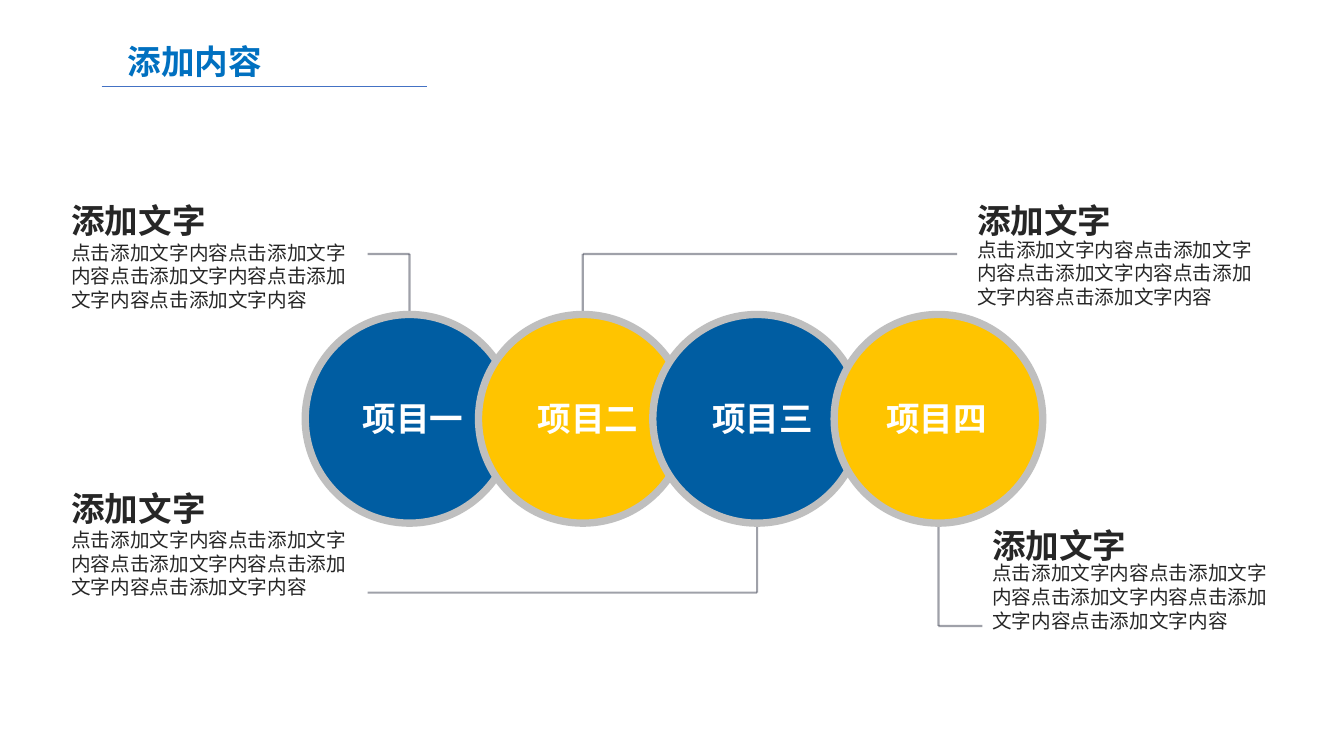
from dataclasses import dataclass

from lxml import etree
from pptx import Presentation
from pptx import util as u
from pptx.dml.color import RGBColor
from pptx.enum import shapes, text
from pptx.oxml.ns import qn


@dataclass(frozen=True)
class Theme:
    """Colours, type sizes and font of the slide."""
    font: str = "Noto Sans CJK SC"
    blue: str = "005DA2"
    gold: str = "FFC400"
    ring: str = "BFBFBF"
    ink: str = "262626"
    white: str = "FFFFFF"
    title: str = "0070C0"
    rule: str = "4472C4"
    link: str = "414455"
    head: int = 24
    body: int = 14


THEME = Theme()
SIZE = 2.07
TOP = 3.12


def rgb(code):
    """Turn a hex code into a colour."""
    return RGBColor.from_string(code)


def write(shape, words, size, color, bold=False, lead=None, align=text.PP_ALIGN.LEFT):
    """Put one styled paragraph into a shape."""
    frame = shape.text_frame
    frame.word_wrap = True
    frame.vertical_anchor = text.MSO_ANCHOR.TOP
    para = frame.paragraphs[0]
    para.text = words
    para.alignment = align
    if lead:
        para.line_spacing = lead
    font = para.font
    font.size, font.bold = u.Pt(size), bold
    font.color.rgb = rgb(color)
    font.name = THEME.font
    props = para._p.pPr.find(qn("a:defRPr"))
    etree.SubElement(props, qn("a:ea"), typeface=THEME.font)


def add_text(slide, box, words, size, color, **style):
    """Add a text box."""
    shape = slide.shapes.add_textbox(*map(u.Inches, box))
    write(shape, words, size, color, **style)
    return shape


def add_note(slide, left, top, drop):
    """Add a heading with its body text below."""
    add_text(slide, (left, top, 3.05, 0.43), "添加文字", THEME.head, THEME.ink,
             bold=True, lead=1.4)
    add_text(slide, (left, top + drop, 3.05, 1.38), "点击添加文字内容" + "点击添加文字内容" * 4,
             THEME.body, THEME.ink)


def add_line(slide, start, end, color, width, alpha=None):
    """Add a straight line, see-through if alpha is given."""
    line = slide.shapes.add_connector(shapes.MSO_CONNECTOR.STRAIGHT,
                                      *map(u.Inches, start + end))
    line.line.color.rgb = rgb(color)
    line.line.width = u.Pt(width)
    props = line._element.spPr
    if alpha:
        tint = props.find(".//" + qn("a:srgbClr"))
        etree.SubElement(tint, qn("a:alpha"), val=str(alpha * 1000))
    etree.SubElement(props, qn("a:effectLst"))


def add_link(slide, left, bend, end):
    """Lead from a circle's top or bottom to a note."""
    mid = left + SIZE / 2
    edge = TOP if bend < TOP else TOP + SIZE
    for start, stop in (((mid, edge), (mid, bend)), ((mid, bend), (end, bend))):
        add_line(slide, start, stop, THEME.link, 1.5, alpha=50)


def add_shape(slide, kind, box, fill):
    """Add a filled shape without outline or shadow."""
    shape = slide.shapes.add_shape(kind, *map(u.Inches, box))
    shape.shadow.inherit = False
    shape.fill.solid()
    shape.fill.fore_color.rgb = rgb(fill)
    shape.line.fill.background()
    return shape


def add_disc(slide, left, inset, name, fill):
    """Add a ringed circle and its label."""
    disc = add_shape(slide, shapes.MSO_SHAPE.OVAL, (left, TOP, SIZE, SIZE), fill)
    disc.line.color.rgb = rgb(THEME.ring)
    disc.line.width = u.Pt(5.25)
    label = add_shape(slide, shapes.MSO_SHAPE.RECTANGLE,
                      (left + inset, 3.9, 1.34, 0.62), fill)
    write(label, name, THEME.head, THEME.white, bold=True)


def main():
    """Build and save the slide."""
    deck = Presentation()
    deck.slide_width, deck.slide_height = u.Inches(13.34), u.Inches(7.5)
    slide = deck.slides.add_slide(deck.slide_layouts[6])

    add_line(slide, (1.01, 0.86), (4.24, 0.86), THEME.rule, 0.5)
    for note in ((0.61, 1.77, 0.57), (0.61, 4.63, 0.56),
                 (9.6, 1.77, 0.54), (9.75, 5, 0.52)):
        add_note(slide, *note)

    discs = (
        (3.03, 0.47, "项目一", THEME.blue, 2.52, 3.65),
        (4.75, 0.49, "项目二", THEME.gold, 2.52, 9.5),
        (6.48, 0.49, "项目三", THEME.blue, 5.88, 3.65),
        (8.28, 0.42, "项目四", THEME.gold, 6.21, 9.75),
    )
    for left, _, _, _, bend, end in discs:
        add_link(slide, left, bend, end)
    for left, inset, name, fill, _, _ in discs:
        add_disc(slide, left, inset, name, fill)

    title = add_text(slide, (1.16, 0.36, 1.55, 0.5), "添加内容", THEME.head, THEME.title,
                     bold=True, align=text.PP_ALIGN.CENTER)
    title.text_frame.word_wrap = False
    title.text_frame.auto_size = text.MSO_AUTO_SIZE.SHAPE_TO_FIT_TEXT
    deck.save("out.pptx")


if __name__ == "__main__":
    main()
